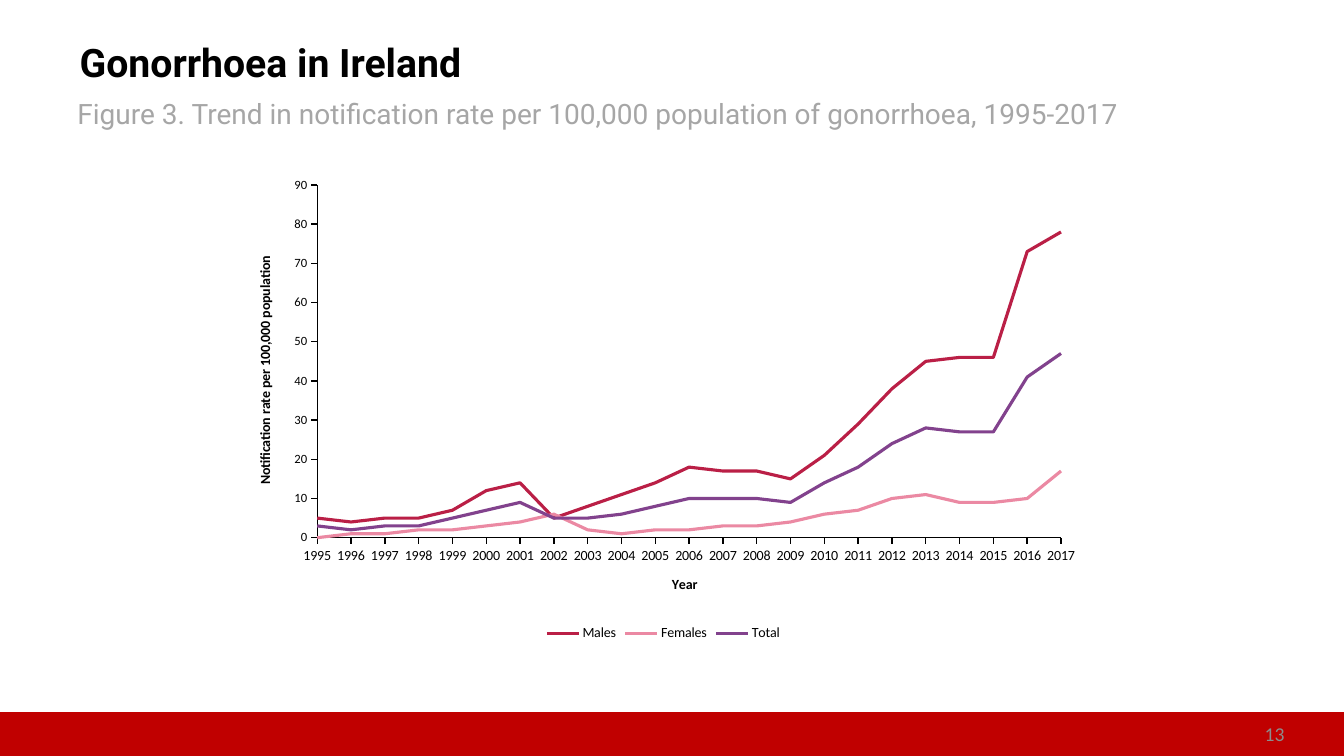
from lxml import etree
from pptx import Presentation
from pptx import util as u
from pptx.chart.data import CategoryChartData
from pptx.dml.color import RGBColor
from pptx.enum import chart as ch, shapes, text
from pptx.oxml import parse_xml
from pptx.oxml.ns import nsdecls, qn


def rgb(color):
    return RGBColor.from_string(color)


def write(tf, words, font, size, color, bold=False):
    """Add one formatted run to the first paragraph and return the paragraph."""
    p = tf.paragraphs[0]
    r = p.add_run()
    r.text = words
    r.font.name, r.font.size, r.font.bold = font, u.Pt(size), bold
    r.font.color.rgb = rgb(color)
    return p


prs = Presentation()
prs.slide_width, prs.slide_height = u.Inches(13.33), u.Inches(7.5)
s = prs.slides.add_slide(prs.slide_layouts[5])

# Footer band and slide number
band = s.shapes.add_shape(shapes.MSO_SHAPE.RECTANGLE, 0, u.Inches(7.08),
                          u.Inches(13.33), u.Inches(0.42))
band.shadow.inherit = False
band.fill.solid()
band.fill.fore_color.rgb = rgb("C00000")
band.line.color.rgb = rgb("C00000")
band.line.width = u.Pt(2)

number = s.shapes.add_textbox(u.Inches(9.75), u.Inches(7.08), u.Inches(3.11), u.Inches(0.4))
title = s.shapes.title
title.left, title.top = u.Inches(0.67), u.Inches(0.3)
title.width, title.height = u.Inches(10.33), u.Inches(0.62)
for sp in (number, title):
    tf = sp.text_frame
    tf.word_wrap = True
    tf.auto_size = text.MSO_AUTO_SIZE.NONE
    tf.vertical_anchor = text.MSO_ANCHOR.MIDDLE
    tf.margin_left = tf.margin_right = u.Inches(0.12)
    tf.margin_top = tf.margin_bottom = u.Inches(0.06)
p = write(number.text_frame, "13", "Calibri", 14, "8C8C8C")
p.alignment = text.PP_ALIGN.RIGHT
p = write(title.text_frame, "Gonorrhoea in Ireland", "Roboto", 28, "000000", True)
p.alignment = text.PP_ALIGN.LEFT

caption = s.shapes.add_textbox(u.Inches(0.67), u.Inches(0.91), u.Inches(12), u.Inches(0.44))
caption.text_frame.word_wrap = True
caption.text_frame.auto_size = text.MSO_AUTO_SIZE.SHAPE_TO_FIT_TEXT
write(caption.text_frame,
      "Figure 3. Trend in notification rate per 100,000 population of gonorrhoea, 1995-2017",
      "Roboto", 20, "A6A6A6")

# Trend chart
rates = [
    ("Males", "BA1F46", [5, 4, 5, 5, 7, 12, 14, 5, 8, 11, 14, 18, 17, 17, 15, 21, 29, 38,
                         45, 46, 46, 73, 78]),
    ("Females", "EB89A3", [0, 1, 1, 2, 2, 3, 4, 6, 2, 1, 2, 2, 3, 3, 4, 6, 7, 10,
                           11, 9, 9, 10, 17]),
    ("Total", "82428D", [3, 2, 3, 3, 5, 7, 9, 5, 5, 6, 8, 10, 10, 10, 9, 14, 18, 24,
                         28, 27, 27, 41, 47]),
]
data = CategoryChartData()
data.categories = [str(year) for year in range(1995, 2018)]
for name, color, values in rates:
    data.add_series(name, values)
chart = s.shapes.add_chart(ch.XL_CHART_TYPE.LINE, u.Inches(2.33), u.Inches(1.67),
                           u.Inches(8.5), u.Inches(4.73), data).chart
chart.has_title = False
chart.font.name, chart.font.size = "Calibri", u.Pt(10)
chart.font.color.rgb = rgb("000000")
chart.has_legend = True
chart.legend.position = ch.XL_LEGEND_POSITION.BOTTOM
chart.legend.include_in_layout = False
chart.legend.font.size = u.Pt(10)

plot = chart.plots[0]
plot.vary_by_categories = False
for series, (name, color, values) in zip(plot.series, rates):
    series.smooth = False
    series.marker.style = ch.XL_MARKER_STYLE.NONE
    series.format.line.color.rgb = rgb(color)
    series.format.line.width = u.Pt(2.25)

for axis, label, size in ((chart.category_axis, "Year", 10),
                          (chart.value_axis, "Notification rate per 100,000 population", 9)):
    axis.has_major_gridlines = False
    axis.major_tick_mark = ch.XL_TICK_MARK.OUTSIDE
    axis.minor_tick_mark = ch.XL_TICK_MARK.NONE
    axis.tick_labels.font.size = u.Pt(size)
    axis.format.line.color.rgb = rgb("000000")
    axis.format.line.width = u.Pt(1)
    write(axis.axis_title.text_frame, label, "Calibri", 10, "000000", True)

# Lines start on the value axis
val_ax = chart.value_axis._element
for old in val_ax.findall(qn("c:crossBetween")):
    val_ax.remove(old)
cross = etree.Element(qn("c:crossBetween"), val="midCat")
val_ax.find(qn("c:crosses")).addnext(cross)
chart.value_axis.minimum_scale, chart.value_axis.maximum_scale = 0, 90
chart.value_axis.major_unit = 10

# Fixed place for the plot inside the chart
area = chart._chartSpace.chart.plotArea
for old in area.findall(qn("c:layout")):
    area.remove(old)
sides = "".join(f'<c:{side} val="{share}"/>' for side, share in
                (("x", 0.096), ("y", 0.035), ("w", 0.868), ("h", 0.74)))
area.insert(0, parse_xml(
    f'<c:layout {nsdecls("c")}><c:manualLayout><c:layoutTarget val="inner"/>'
    f'<c:xMode val="edge"/><c:yMode val="edge"/>{sides}</c:manualLayout></c:layout>'))

prs.save("out.pptx")
